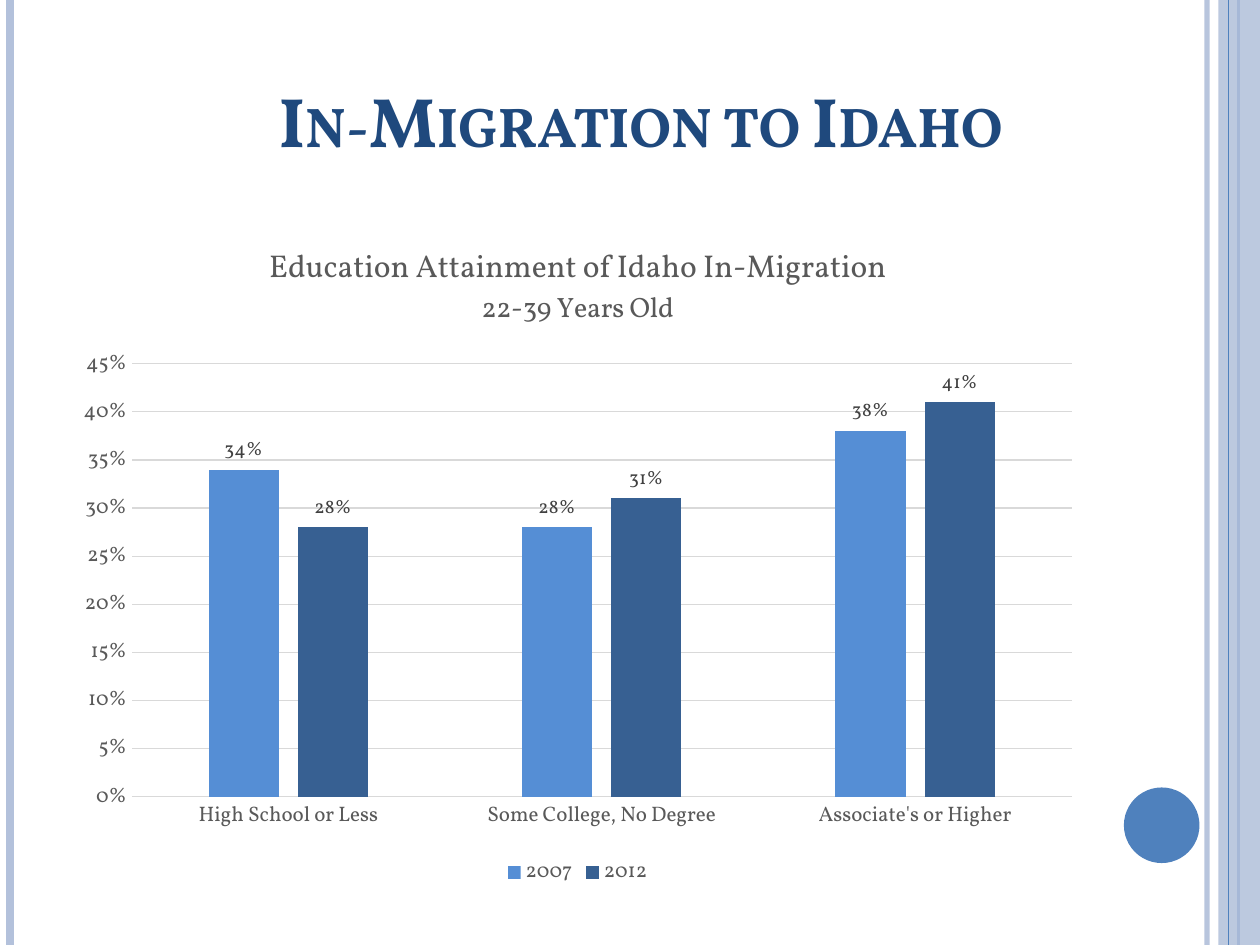
from pptx import Presentation, util as u
from pptx.chart.data import CategoryChartData
from pptx.dml.color import RGBColor
from pptx.enum import chart as ch, shapes, text
from pptx.oxml.ns import qn
from lxml import etree

FONT = "Vollkorn"
NAVY, BLUE, PALE = "1F497D", "4F81BD", "B3C1DB"
GRAY, RULE = "595959", "D9D9D9"


def rgb(code):
    return RGBColor.from_string(code)


def fade(fill, pct):
    """Set the opacity of a solid fill, in percent."""
    for tint in fill._xPr.iter(qn("a:srgbClr")):
        etree.SubElement(tint, qn("a:alpha")).set("val", str(pct * 1000))


class Deck:
    def __init__(self, wide, high):
        self.prs = Presentation()
        self.prs.slide_width = u.Inches(wide)
        self.prs.slide_height = u.Inches(high)
        self.high = high
        self.slide = self.prs.slides.add_slide(self.prs.slide_layouts[6])

    def style(self, font, size, color, bold=False):
        font.name, font.size, font.bold = FONT, u.Pt(size), bold
        font.color.rgb = rgb(color)

    def stripe(self, x, color, width, alpha=None):
        """Draw a full-height vertical line."""
        line = self.slide.shapes.add_connector(
            shapes.MSO_CONNECTOR.STRAIGHT,
            u.Inches(x), 0, u.Inches(x), u.Inches(self.high))
        line.line.color.rgb = rgb(color)
        line.line.width = u.Pt(width)
        if alpha:
            fade(line.line.fill, alpha)
        etree.SubElement(line._element.spPr, qn("a:effectLst"))

    def shape(self, kind, box, color, alpha=None):
        item = self.slide.shapes.add_shape(kind, *map(u.Inches, box))
        item.shadow.inherit = False
        item.fill.solid()
        item.fill.fore_color.rgb = rgb(color)
        item.line.fill.background()
        if alpha:
            fade(item.fill, alpha)

    def title(self, box, words, size, color):
        frame = self.slide.shapes.add_textbox(*map(u.Inches, box)).text_frame
        frame.word_wrap = True
        frame.vertical_anchor = text.MSO_ANCHOR.BOTTOM
        para = frame.paragraphs[0]
        para.alignment = text.PP_ALIGN.CENTER
        run = para.add_run()
        run.text = words
        self.style(run.font, size, color, True)
        run._r.get_or_add_rPr().set("cap", "small")

    def axis(self, axis):
        axis.major_tick_mark = axis.minor_tick_mark = ch.XL_TICK_MARK.NONE
        self.style(axis.tick_labels.font, 12, GRAY)

    def rule(self, line):
        line.color.rgb = rgb(RULE)
        line.width = u.Pt(0.75)

    def columns(self, box, heads, cats, rows):
        """Add clustered columns; rows hold name, color and values."""
        data = CategoryChartData(number_format="0%")
        data.categories = cats
        for name, _, vals in rows:
            data.add_series(name, vals)
        chart = self.slide.shapes.add_chart(
            ch.XL_CHART_TYPE.COLUMN_CLUSTERED,
            *map(u.Inches, box), data).chart
        self.style(chart.font, 10, "000000")

        # Heading lines
        frame = chart.chart_title.text_frame
        for i, (words, size) in enumerate(heads):
            para = frame.add_paragraph() if i else frame.paragraphs[0]
            run = para.add_run()
            run.text = words
            self.style(run.font, size, GRAY)
        chart.chart_title.include_in_layout = False

        # Axes and grid
        self.axis(chart.category_axis)
        self.rule(chart.category_axis.format.line)
        scale = chart.value_axis
        self.axis(scale)
        scale.minimum_scale, scale.maximum_scale = 0, 0.45
        scale.major_unit = 0.05
        scale.format.line.fill.background()
        self.rule(scale.major_gridlines.format.line)
        scale.tick_labels.number_format = "0%"
        scale.tick_labels.number_format_is_linked = False

        # Legend
        chart.has_legend = True
        chart.legend.position = ch.XL_LEGEND_POSITION.BOTTOM
        chart.legend.include_in_layout = False
        self.style(chart.legend.font, 12, GRAY)

        # Bars and labels
        plot = chart.plots[0]
        plot.vary_by_categories = False
        plot.gap_width, plot.overlap = 219, -27
        for bars, (_, color, _) in zip(plot.series, rows):
            bars.format.fill.solid()
            bars.format.fill.fore_color.rgb = rgb(color)
            tags = bars.data_labels
            tags.show_value = True
            tags.number_format = "0%"
            tags.number_format_is_linked = False
            tags.position = ch.XL_LABEL_POSITION.OUTSIDE_END
            self.style(tags.font, 11, "404040")


def main():
    deck = Deck(10, 7.5)

    # Side stripes and disc
    deck.stripe(9.58, PALE, 3, 93)
    deck.stripe(0.08, PALE, 4.5)
    deck.stripe(9.83, BLUE, 1.5)
    deck.shape(shapes.MSO_SHAPE.RECTANGLE, (9.67, 0, 0.33, 7.5), PALE, 87)
    deck.stripe(9.75, BLUE, 0.75)
    deck.shape(shapes.MSO_SHAPE.OVAL, (8.92, 6.25, 0.6, 0.6), BLUE)

    # Chart
    deck.columns(
        (0.5, 1.75, 8.17, 5.33),
        [("Education Attainment of Idaho In-Migration", 18),
         ("22-39 Years Old", 16)],
        ["High School or Less", "Some College, No Degree",
         "Associate's or Higher"],
        [("2007", "558ED5", (0.34, 0.28, 0.38)),
         ("2012", "376092", (0.28, 0.31, 0.41))])

    # Slide title
    deck.title((1, 0.08, 8.17, 1.25), "In-Migration to Idaho", 40, NAVY)

    deck.prs.save("out.pptx")


if __name__ == "__main__":
    main()
